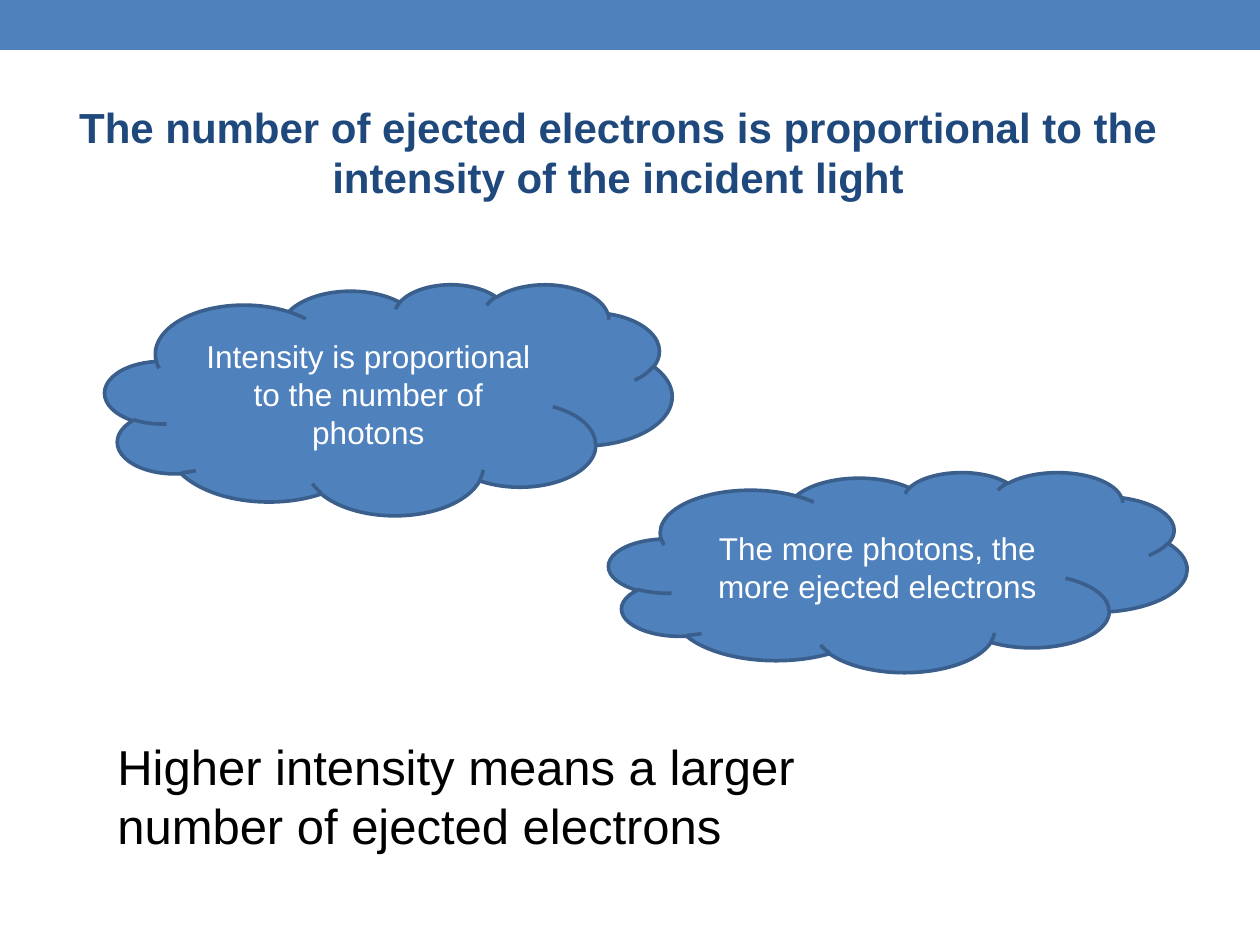
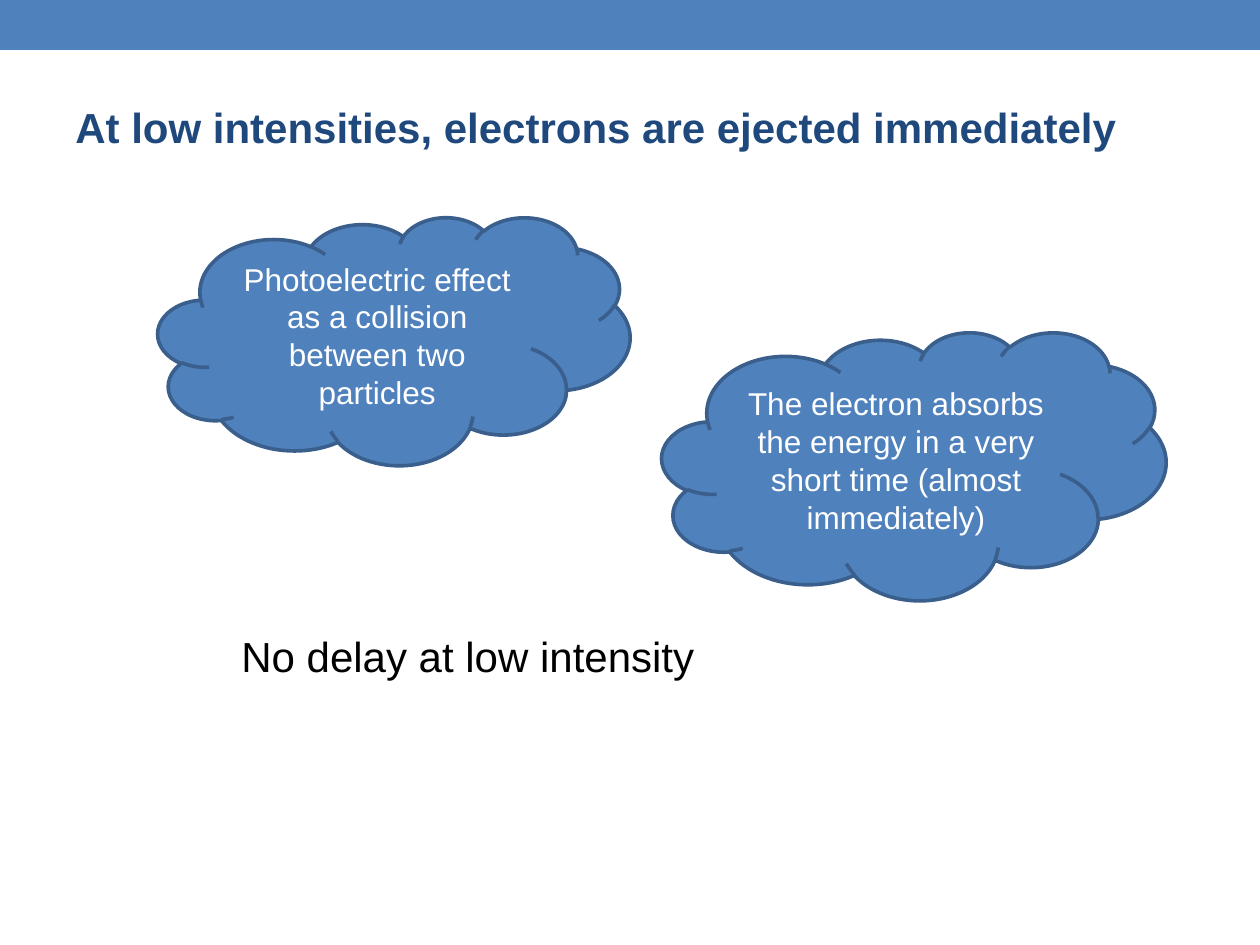
from pptx import Presentation
from pptx.dml.color import RGBColor
from pptx.enum.shapes import MSO_SHAPE
from pptx.enum.text import MSO_ANCHOR, PP_ALIGN
from pptx.util import Emu, Pt

PX = 914400 // 126
BLUE = RGBColor(0x4F, 0x81, 0xBD)
OUTLINE = RGBColor(0x3A, 0x5F, 0x8C)
NAVY = RGBColor(0x1F, 0x49, 0x7D)
WHITE = RGBColor(0xFF, 0xFF, 0xFF)
BLACK = RGBColor(0, 0, 0)

SLIDES = [
    {
        "title": "The number of ejected electrons is proportional to the intensity of the incident light",
        "align": PP_ALIGN.CENTER,
        "clouds": [
            ("Intensity is proportional to the number of photons", (105, 284, 567, 231)),
            ("The more photons, the more ejected electrons", (609, 472, 578, 200)),
        ],
        "conclusion": ("Higher intensity means a larger number of ejected electrons", (105, 730, 761, 131), 28),
    },
    {
        "title": "At low intensities, electrons are ejected immediately",
        "align": PP_ALIGN.LEFT,
        "clouds": [
            ("Photoelectric effect as a collision between two particles", (158, 217, 472, 248)),
            ("The electron absorbs the energy in a very short time (almost immediately)", (662, 332, 504, 268)),
        ],
        "conclusion": ("No delay at low intensity", (229, 624, 495, 63), 24),
    },
]


def add_box(s, box, kind=None):
    box = [Emu(v * PX) for v in box]
    if kind is None:
        return s.shapes.add_textbox(*box)
    sp = s.shapes.add_shape(kind, *box)
    sp.shadow.inherit = False
    sp.fill.solid()
    sp.fill.fore_color.rgb = BLUE
    sp.line.fill.background()
    return sp


def write(sp, text, size, color, align=PP_ALIGN.LEFT, bold=False):
    tf = sp.text_frame
    tf.word_wrap = True
    tf.text = text
    p = tf.paragraphs[0]
    p.alignment = align
    font = p.runs[0].font
    font.name = "Arial"
    font.size = Pt(size)
    font.bold = bold
    font.color.rgb = color
    return tf


prs = Presentation()
prs.slide_width = Emu(1260 * PX)
prs.slide_height = Emu(945 * PX)

for content in SLIDES:
    s = prs.slides.add_slide(prs.slide_layouts[6])
    add_box(s, (0, 0, 1260, 50), MSO_SHAPE.RECTANGLE)

    title = add_box(s, (63, 95, 1134, 126))
    tf = write(title, content["title"], 24, NAVY, content["align"], True)
    tf.margin_right = Emu(36 * PX)

    for text, box in content["clouds"]:
        cloud = add_box(s, box, MSO_SHAPE.CLOUD)
        cloud.line.color.rgb = OUTLINE
        cloud.line.width = Pt(2.08)
        tf = write(cloud, text, 18, WHITE, PP_ALIGN.CENTER)
        tf.vertical_anchor = MSO_ANCHOR.MIDDLE

    text, box, size = content["conclusion"]
    write(add_box(s, box), text, size, BLACK)

prs.save("out.pptx")
